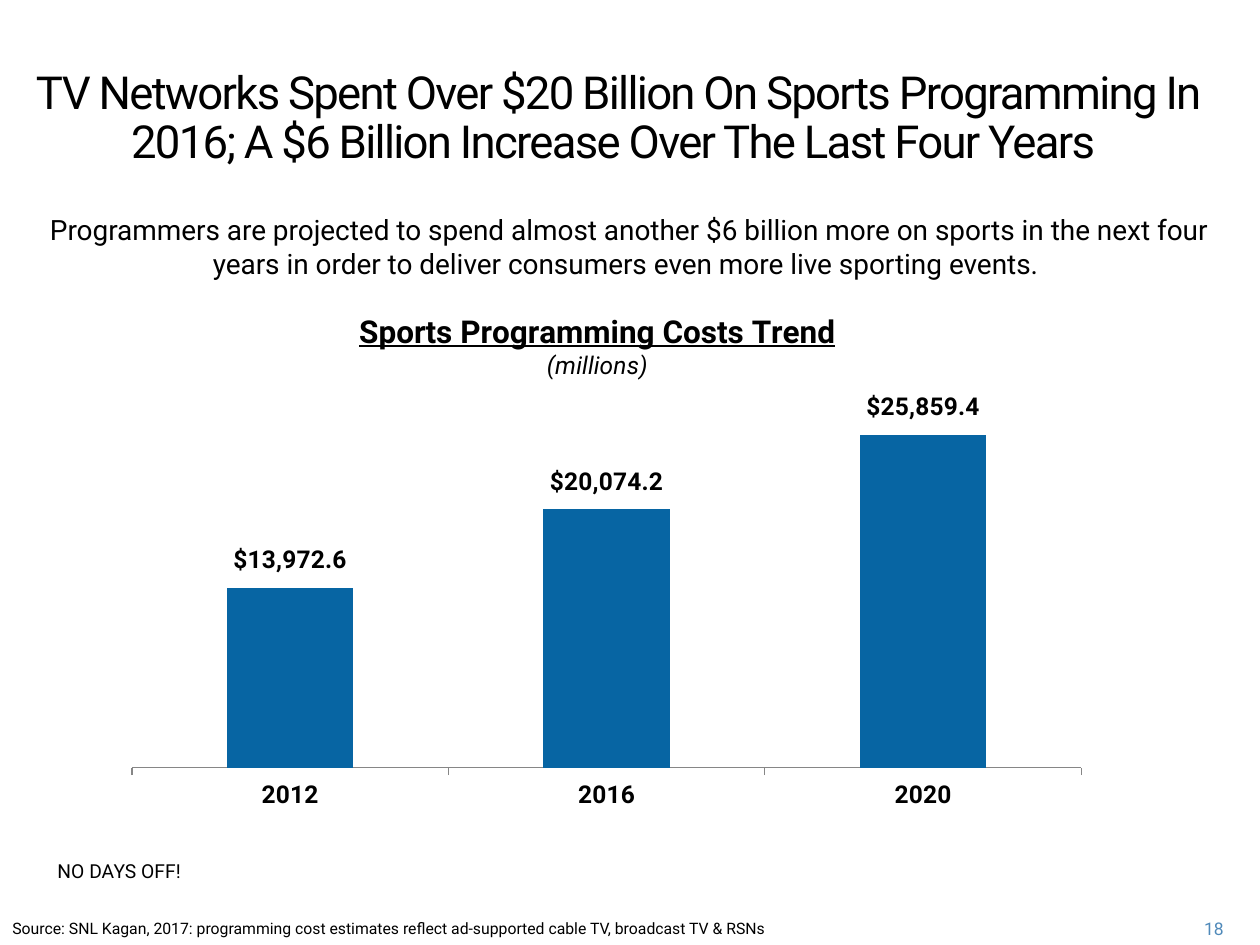
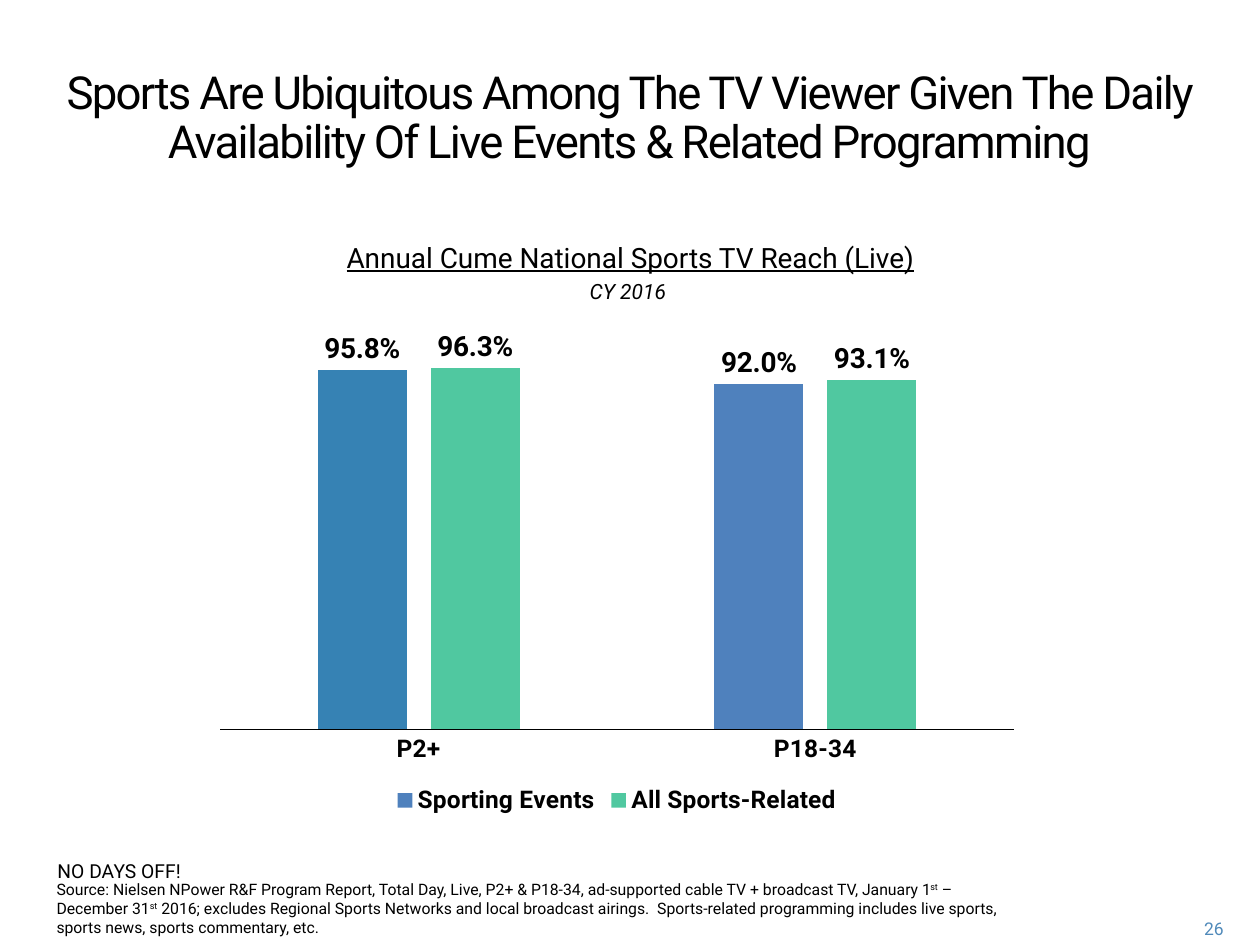
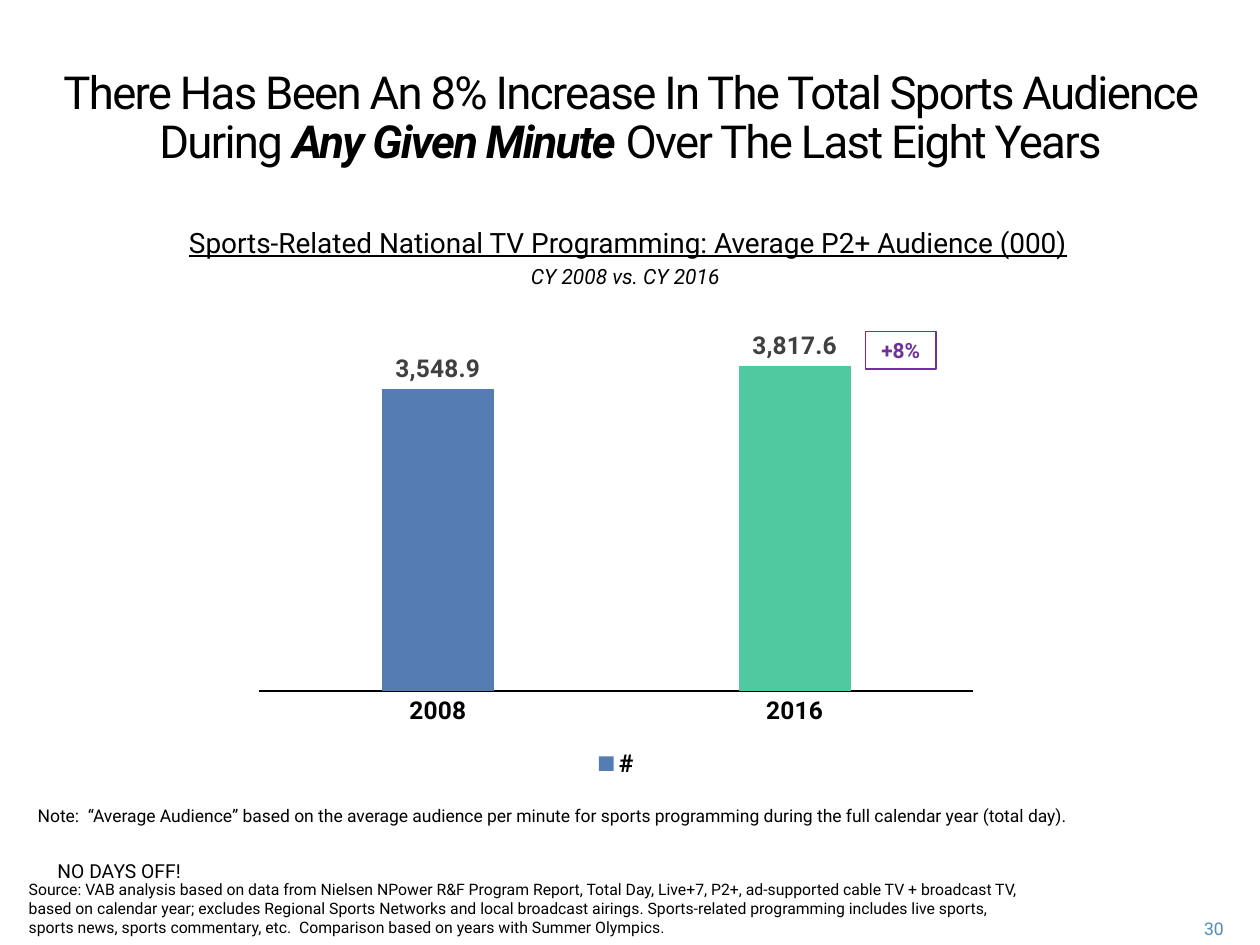
from dataclasses import dataclass
from typing import Optional

from lxml.etree import SubElement
from pptx import Presentation
from pptx.chart.chart import Chart
from pptx.chart.data import CategoryChartData
from pptx.dml.color import RGBColor
from pptx.enum.chart import XL_CHART_TYPE, XL_LABEL_POSITION, XL_LEGEND_POSITION, XL_TICK_MARK
from pptx.enum.shapes import MSO_SHAPE
from pptx.enum.text import MSO_ANCHOR, PP_ALIGN
from pptx.oxml import parse_xml
from pptx.oxml.ns import nsdecls, qn
from pptx.slide import Slide
from pptx.text.text import Font, TextFrame
from pptx.util import Cm, Pt

FONT = "Roboto"
BLACK = RGBColor(0x00, 0x00, 0x00)
CHARCOAL = RGBColor(0x40, 0x40, 0x40)
GRAY = RGBColor(0x86, 0x86, 0x86)
PAGE_BLUE = RGBColor(0x50, 0x8A, 0xBA)
COST_BLUE = RGBColor(0x07, 0x65, 0xA3)
REACH_BLUE = RGBColor(0x36, 0x82, 0xB4)
EVENT_BLUE = RGBColor(0x4F, 0x81, 0xBD)
AUDIENCE_BLUE = RGBColor(0x56, 0x7C, 0xB4)
GREEN = RGBColor(0x50, 0xC8, 0xA0)
PURPLE = RGBColor(0x70, 0x30, 0xA0)


@dataclass(frozen=True)
class Area:
    left: float
    top: float
    width: float
    height: float

    def lengths(self) -> tuple[Cm, Cm, Cm, Cm]:
        return Cm(self.left), Cm(self.top), Cm(self.width), Cm(self.height)


@dataclass(frozen=True)
class Span:
    text: str
    size: float
    color: RGBColor = BLACK
    bold: bool = False
    italic: bool = False
    underline: bool = False
    tracking: int = 0
    baseline: int = 0


@dataclass(frozen=True)
class Para:
    spans: list[Span]
    align: PP_ALIGN = PP_ALIGN.LEFT
    before: float = 0
    line: Optional[float] = None


@dataclass(frozen=True)
class Bars:
    name: str
    values: list[float]
    color: RGBColor
    point_colors: tuple[RGBColor, ...] = ()


@dataclass(frozen=True)
class ColumnChart:
    area: Area
    plot: Area
    categories: list[str]
    series: list[Bars]
    number_format: str
    maximum: float
    label_size: float
    label_color: RGBColor = BLACK
    stacked: bool = False
    gap: int = 219
    overlap: int = -27
    axis_color: RGBColor = BLACK


PAGE_NUMBER = Area(23.37, 18.39, 1.55, 0.64)
TAGLINE = Area(0.91, 17.2, 4.78, 1.19)
LABEL_LIFT = 0.05
NO_LEADER_LINES = (
    f"<c:extLst {nsdecls('c')}>"
    '<c:ext uri="{CE6537A1-D6FC-4f65-9D91-7224C49458BB}" '
    'xmlns:c15="http://schemas.microsoft.com/office/drawing/2012/chart">'
    '<c15:showLeaderLines val="0"/></c:ext></c:extLst>'
)


def style_font(font: Font, size: float, color: RGBColor = BLACK, bold: bool = False) -> None:
    font.name = FONT
    font.size = Pt(size)
    font.bold = bold
    font.color.rgb = color


def write(frame: TextFrame, paras: list[Para]) -> None:
    for index, item in enumerate(paras):
        para = frame.paragraphs[0] if index == 0 else frame.add_paragraph()
        para.alignment = item.align
        if item.before:
            para.space_before = Pt(item.before)
        if item.line:
            para.line_spacing = Pt(item.line)
        for span in item.spans:
            run = para.add_run()
            run.text = span.text
            style_font(run.font, span.size, span.color, span.bold)
            run.font.italic = span.italic
            run.font.underline = span.underline
            properties = run._r.get_or_add_rPr()
            if span.tracking:
                properties.set("spc", str(span.tracking))
            if span.baseline:
                properties.set("baseline", str(span.baseline))


def add_text(page: Slide, area: Area, paras: list[Para],
             anchor: MSO_ANCHOR = MSO_ANCHOR.TOP) -> None:
    frame = page.shapes.add_textbox(*area.lengths()).text_frame
    frame.word_wrap = True
    frame.vertical_anchor = anchor
    write(frame, paras)


def add_plain(page: Slide, area: Area, text: str, size: float,
              align: PP_ALIGN = PP_ALIGN.LEFT) -> None:
    add_text(page, area, [Para([Span(text, size)], align)])


def title_span(text: str, strong: bool = False) -> Span:
    return Span(text, 26, bold=strong, italic=strong, tracking=-100)


def add_title(page: Slide, left: float, width: float, spans: list[Span]) -> None:
    add_text(page, Area(left, 1.27, width, 1.73), [Para(spans, PP_ALIGN.CENTER, line=28)])


def add_chart_heading(page: Slide, left: float, top: float, heading: str, period: str) -> None:
    add_text(page, Area(left, top, 24.46, 1.02), [
        Para([Span(heading, 16, underline=True)], PP_ALIGN.CENTER),
        Para([Span(period, 12, italic=True)], PP_ALIGN.CENTER, before=2.4),
    ])


def new_page(deck: Presentation, number: int) -> Slide:
    page = deck.slides.add_slide(deck.slide_layouts[6])
    add_text(page, PAGE_NUMBER,
             [Para([Span(str(number), 10, PAGE_BLUE)], PP_ALIGN.RIGHT)], MSO_ANCHOR.MIDDLE)
    add_plain(page, TAGLINE, "NO DAYS OFF!", 11)
    return page


def manual_layout(**settings: object):
    layout = parse_xml(f"<c:layout {nsdecls('c')}/>")
    manual = SubElement(layout, qn("c:manualLayout"))
    for name, value in settings.items():
        SubElement(manual, qn(f"c:{name}")).set("val", str(value))
    return layout


def replace_layout(parent, position: int, layout) -> None:
    for old in parent.findall(qn("c:layout")):
        parent.remove(old)
    parent.insert(position, layout)


def lift_labels(series, design: ColumnChart) -> None:
    for index in range(len(design.categories)):
        style_font(series.points[index].data_label.font,
                   design.label_size, design.label_color, True)
    for label, value in zip(series._element.iter(qn("c:dLbl")), series.values):
        half_bar = value / design.maximum * design.plot.height / 2
        label.insert(1, manual_layout(x=0, y=round(-half_bar - LABEL_LIFT, 3)))
    labels = series._element.find(qn("c:dLbls"))
    for leader in labels.findall(qn("c:showLeaderLines")):
        leader.set("val", "0")
    labels.append(parse_xml(NO_LEADER_LINES))


def add_columns(page: Slide, design: ColumnChart) -> Chart:
    data = CategoryChartData(number_format=design.number_format)
    data.categories = design.categories
    for bars in design.series:
        data.add_series(bars.name, bars.values)
    kind = XL_CHART_TYPE.COLUMN_STACKED if design.stacked else XL_CHART_TYPE.COLUMN_CLUSTERED
    chart = page.shapes.add_chart(kind, *design.area.lengths(), data).chart
    style_font(chart.font, 10)
    chart.has_title = False
    chart.has_legend = not design.stacked
    if chart.has_legend:
        chart.legend.position = XL_LEGEND_POSITION.BOTTOM
        chart.legend.include_in_layout = False
        style_font(chart.legend.font, 14, bold=True)

    category_axis = chart.category_axis
    category_axis.major_tick_mark = XL_TICK_MARK.OUTSIDE if design.stacked else XL_TICK_MARK.NONE
    category_axis.format.line.color.rgb = design.axis_color
    category_axis.format.line.width = Pt(0.75)
    style_font(category_axis.tick_labels.font, 14, bold=True)
    value_axis = chart.value_axis
    value_axis.minimum_scale = 0
    value_axis.maximum_scale = design.maximum
    value_axis.has_major_gridlines = False
    value_axis.visible = False

    plot = chart.plots[0]
    plot.vary_by_categories = False
    plot.gap_width = design.gap
    plot.overlap = design.overlap
    for series, bars in zip(plot.series, design.series):
        series.format.fill.solid()
        series.format.fill.fore_color.rgb = bars.color
        for index, color in enumerate(bars.point_colors):
            fill = series.points[index].format.fill
            fill.solid()
            fill.fore_color.rgb = color
        labels = series.data_labels
        labels.show_value = True
        labels.number_format = design.number_format
        labels.number_format_is_linked = False
        style_font(labels.font, design.label_size, design.label_color, True)
        if design.stacked:
            lift_labels(series, design)
        else:
            labels.position = XL_LABEL_POSITION.OUTSIDE_END
    replace_layout(chart._chartSpace.chart.plotArea, 0, manual_layout(
        layoutTarget="inner", xMode="edge", yMode="edge",
        x=design.plot.left, y=design.plot.top, w=design.plot.width, h=design.plot.height))
    return chart


def add_costs_page(deck: Presentation) -> None:
    page = new_page(deck, 18)
    add_plain(page, Area(0, 18.39, 18.82, 0.66),
              "Source: SNL Kagan, 2017: programming cost estimates reflect ad-supported "
              "cable TV, broadcast TV & RSNs", 9)
    add_plain(page, Area(0.48, 4.17, 24.41, 1.63),
              "Programmers are projected to spend almost another $6 billion more on sports in the "
              "next four years in order to deliver consumers even more live sporting events. ",
              16, PP_ALIGN.CENTER)
    chart = add_columns(page, ColumnChart(
        Area(2.26, 5.51, 19.94, 11.05), Area(0.02, 0.197, 0.96, 0.705),
        ["2012", "2016", "2020"],
        [Bars("Series 1", [13972.6, 20074.2, 25859.4], COST_BLUE)],
        '"$"#,##0.0', 30000, 14, stacked=True, gap=150, overlap=100, axis_color=GRAY))
    chart.has_title = True
    write(chart.chart_title.text_frame, [
        Para([Span("Sports Programming Costs Trend", 18, bold=True, underline=True)],
             PP_ALIGN.CENTER),
        Para([Span("(millions)", 14, italic=True)], PP_ALIGN.CENTER),
    ])
    replace_layout(chart.chart_title._element, 1,
                   manual_layout(xMode="edge", yMode="edge", x=0.246, y=0.063))
    add_title(page, 0, 24.92, [title_span(
        "TV Networks Spent Over $20 Billion On Sports Programming In 2016; "
        "A $6 Billion Increase Over The Last Four Years ")])


def add_reach_page(deck: Presentation) -> None:
    page = new_page(deck, 26)
    add_title(page, 0.46, 24.46, [title_span(
        "Sports Are Ubiquitous Among The TV Viewer Given The Daily "
        "Availability Of Live Events & Related Programming")])
    add_columns(page, ColumnChart(
        Area(4.11, 6.68, 16.66, 9.86), Area(0.02, 0.042, 0.96, 0.771),
        ["P2+", "P18-34"],
        [Bars("Sporting Events", [0.958, 0.92], EVENT_BLUE, (REACH_BLUE, EVENT_BLUE)),
         Bars("All Sports-Related", [0.963, 0.931], GREEN)],
        "0.0%", 1, 16))
    add_chart_heading(page, 0.48, 4.72, "Annual Cume National Sports TV Reach (Live)", "CY 2016 ")
    ordinal = Span("st", 9, baseline=30000)
    add_text(page, Area(0.89, 17.61, 20.07, 1.17), [Para([
        Span("Source: Nielsen NPower R&F Program Report, Total Day, Live, P2+ & P18-34, "
             "ad-supported cable TV + broadcast TV, January 1", 9),
        ordinal,
        Span(" – December 31", 9),
        ordinal,
        Span(" 2016; excludes Regional Sports Networks and local broadcast airings.  "
             "Sports-related programming includes live sports, sports news, "
             "sports commentary, etc.", 9),
    ])])


def add_audience_page(deck: Presentation) -> None:
    page = new_page(deck, 30)
    add_columns(page, ColumnChart(
        Area(4.93, 6.68, 14.99, 9.12), Area(0.02, 0.042, 0.96, 0.753),
        ["2008", "2016"],
        [Bars("#", [3548.9, 3817.6], AUDIENCE_BLUE, (AUDIENCE_BLUE, GREEN))],
        "#,##0.0", 4000, 14, CHARCOAL))
    add_chart_heading(page, 0.43, 4.42,
                      "Sports-Related National TV Programming: Average P2+ Audience (000)",
                      "CY 2008 vs. CY 2016 ")
    add_plain(page, Area(0.33, 17.61, 20.75, 1.07),
              "Source: VAB analysis based on data from Nielsen NPower R&F Program Report, "
              "Total Day, Live+7, P2+, ad-supported cable TV + broadcast TV, based on calendar "
              "year; excludes Regional Sports Networks and local broadcast airings. "
              "Sports-related programming includes live sports, sports news, sports commentary, "
              "etc.  Comparison based on years with Summer Olympics.", 9)
    add_title(page, 0.15, 25.12, [
        title_span("There Has Been An 8% Increase In The Total Sports Audience During "),
        title_span("Any Given Minute", strong=True),
        title_span(" Over The Last Eight Years"),
    ])
    add_plain(page, Area(0.51, 16.1, 24.46, 0.53),
              "Note:  “Average Audience” based on the average audience per minute for sports "
              "programming during the full calendar year (total day).", 10)
    badge = page.shapes.add_shape(MSO_SHAPE.RECTANGLE, *Area(17.45, 6.68, 1.42, 0.76).lengths())
    badge.shadow.inherit = False
    badge.fill.background()
    badge.line.color.rgb = PURPLE
    badge.line.width = Pt(0.75)
    badge.text_frame.word_wrap = True
    badge.text_frame.vertical_anchor = MSO_ANCHOR.MIDDLE
    write(badge.text_frame, [Para([Span("+8%", 12, PURPLE, bold=True)], PP_ALIGN.CENTER)])


def main() -> None:
    deck = Presentation()
    deck.slide_width = Cm(25.4)
    deck.slide_height = Cm(19.05)
    add_costs_page(deck)
    add_reach_page(deck)
    add_audience_page(deck)
    deck.save("out.pptx")


if __name__ == "__main__":
    main()
